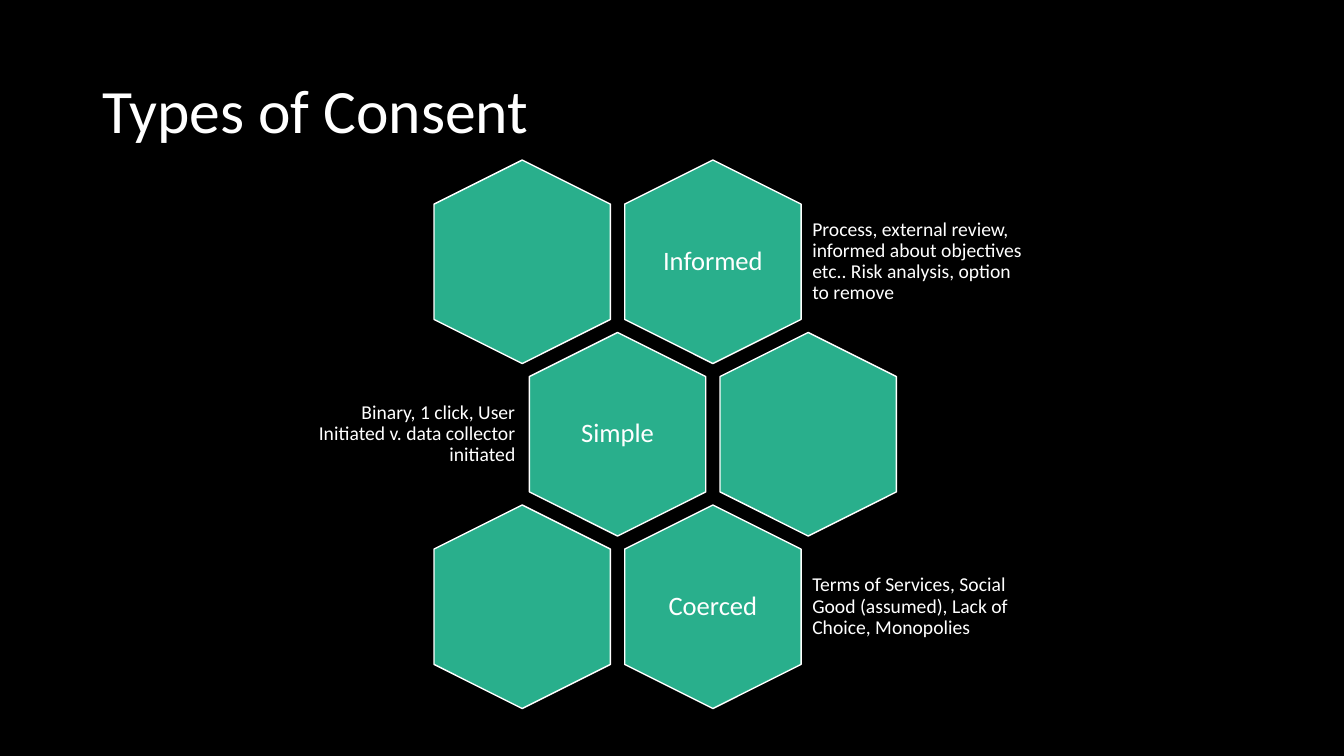
"""Build the "Types of Consent" slide: a honeycomb of labelled hexagons with captions."""
from dataclasses import dataclass

from pptx import Presentation
from pptx.dml.color import RGBColor
from pptx.enum.shapes import MSO_SHAPE as Preset
from pptx.enum.text import MSO_ANCHOR as Anchor, PP_ALIGN as Align
from pptx.slide import Slide
from pptx.util import Pt

BLACK, WHITE, GREEN = "000000", "FFFFFF", "29AF8C"
FONT = "Calibri"

HEXAGON_WIDTH, HEXAGON_HEIGHT = 145.4, 126
FIRST_CENTER_X, FIRST_CENTER_Y = 373, 187
COLUMN_PITCH, ROW_PITCH = 136.2, 123.2
LABEL_WIDTH, LABEL_HEIGHT = 87, 100
CAPTION_HEIGHT = 87


@dataclass(frozen=True)
class Cell:
    row: int
    column: int
    label: str = ""

    @property
    def center_x(self) -> float:
        return FIRST_CENTER_X + (self.column + self.row % 2 / 2) * COLUMN_PITCH

    @property
    def center_y(self) -> float:
        return FIRST_CENTER_Y + self.row * ROW_PITCH


@dataclass(frozen=True)
class Caption:
    row: int
    left: float
    width: float
    text: str
    align: Align = Align.LEFT


CELLS = [
    Cell(0, 1, "Informed"),
    Cell(0, 0),
    Cell(1, 0, "Simple"),
    Cell(1, 1),
    Cell(2, 1, "Coerced"),
    Cell(2, 0),
]
CAPTIONS = [
    Caption(0, 576, 162, "Process, external review, informed about objectives etc.. "
                         "Risk analysis, option to remove"),
    Caption(1, 215.3, 157, "Binary, 1 click, User Initiated v. data collector initiated",
            Align.RIGHT),
    Caption(2, 576, 162, "Terms of Services, Social Good (assumed), Lack of Choice, "
                         "Monopolies"),
]


def color(value: str) -> RGBColor:
    """Turn a hex string into a colour."""
    return RGBColor.from_string(value)


def add_text(slide: Slide, text: str, left: float, top: float, width: float, height: float,
             size: float, align: Align, margin_x: float, margin_y: float) -> None:
    """Add a wrapped, vertically centred white text box."""
    frame = slide.shapes.add_textbox(Pt(left), Pt(top), Pt(width), Pt(height)).text_frame
    frame.word_wrap = True
    frame.vertical_anchor = Anchor.MIDDLE
    frame.margin_left = frame.margin_right = Pt(margin_x)
    frame.margin_top = frame.margin_bottom = Pt(margin_y)
    paragraph = frame.paragraphs[0]
    paragraph.text = text
    paragraph.alignment = align
    paragraph.line_spacing = 0.9
    paragraph.font.name = FONT
    paragraph.font.size = Pt(size)
    paragraph.font.color.rgb = color(WHITE)


def add_cell(slide: Slide, cell: Cell) -> None:
    """Add an upright hexagon and its label, if any."""
    hexagon = slide.shapes.add_shape(
        Preset.HEXAGON, Pt(cell.center_x - HEXAGON_WIDTH / 2),
        Pt(cell.center_y - HEXAGON_HEIGHT / 2), Pt(HEXAGON_WIDTH), Pt(HEXAGON_HEIGHT))
    hexagon.rotation = 90
    hexagon.adjustments[0] = 0.25
    hexagon.shadow.inherit = False
    hexagon.fill.solid()
    hexagon.fill.fore_color.rgb = color(GREEN)
    hexagon.line.color.rgb = color(WHITE)
    hexagon.line.width = Pt(1)
    if cell.label:
        add_text(slide, cell.label, cell.center_x - LABEL_WIDTH / 2,
                 cell.center_y - LABEL_HEIGHT / 2, LABEL_WIDTH, LABEL_HEIGHT,
                 19, Align.CENTER, 5.7, 5.7)


def add_caption(slide: Slide, caption: Caption) -> None:
    """Add the text beside a row of hexagons."""
    top = FIRST_CENTER_Y + caption.row * ROW_PITCH - CAPTION_HEIGHT / 2
    add_text(slide, caption.text, caption.left, top, caption.width, CAPTION_HEIGHT,
             14, caption.align, 4.2, 4.2)


def main() -> None:
    """Build and save the presentation."""
    presentation = Presentation()
    presentation.slide_width, presentation.slide_height = Pt(960), Pt(540)
    slide = presentation.slides.add_slide(presentation.slide_layouts[6])
    slide.background.fill.solid()
    slide.background.fill.fore_color.rgb = color(BLACK)
    add_text(slide, "Types of Consent", 66, 28.8, 828, 104.4, 44, Align.LEFT, 7.2, 3.6)
    for cell in CELLS:
        add_cell(slide, cell)
    for caption in CAPTIONS:
        add_caption(slide, caption)
    presentation.save("out.pptx")


if __name__ == "__main__":
    main()
